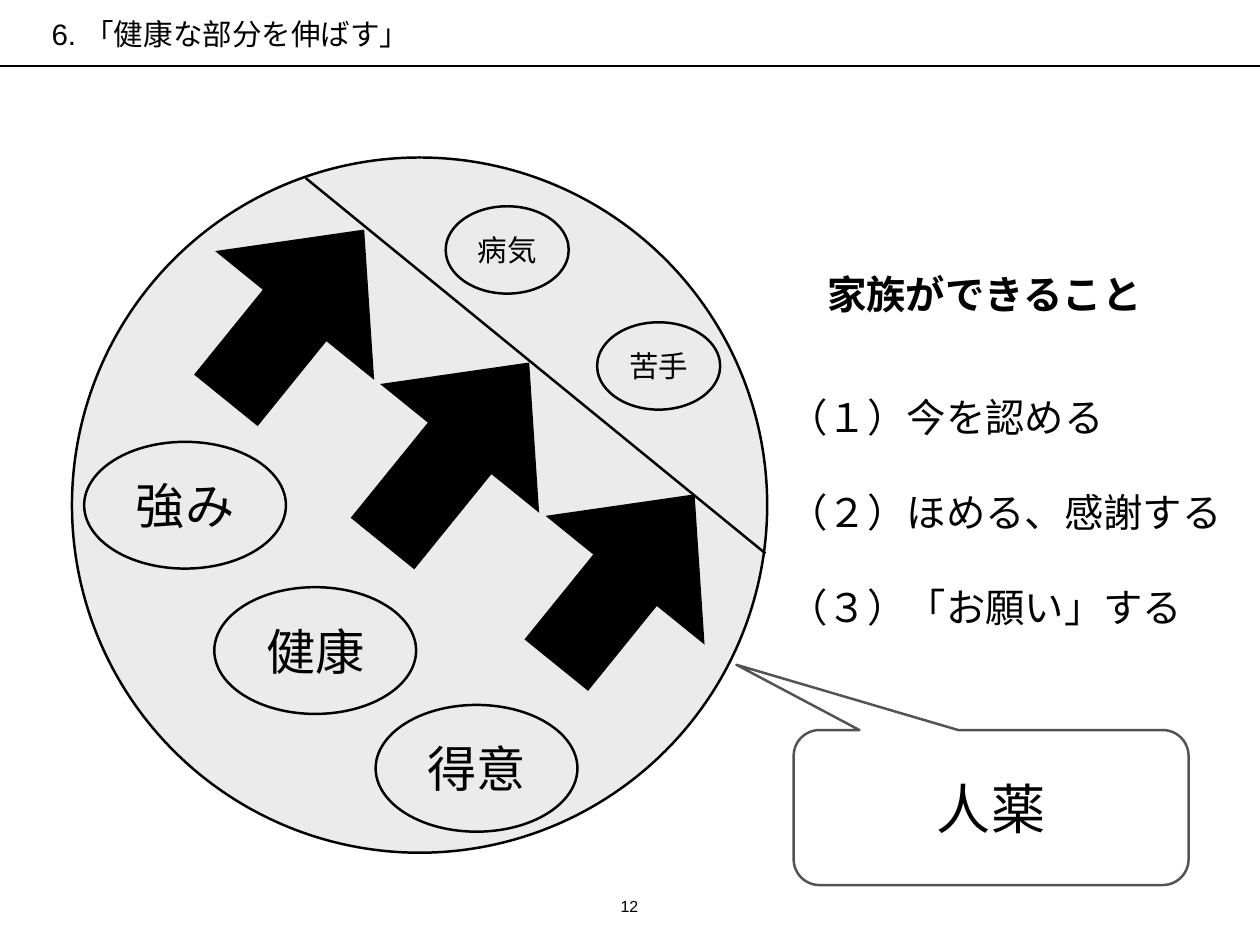
import pptx
import pptx.util
import pptx.dml.color
import pptx.enum.shapes
import pptx.enum.text
import pptx.oxml.ns
import lxml.etree

Pt = pptx.util.Pt
SHAPES = pptx.enum.shapes.MSO_SHAPE
ALIGN = pptx.enum.text.PP_ALIGN
ANCHOR = pptx.enum.text.MSO_ANCHOR
BLACK, WHITE, PALE, GREY = "000000", "FFFFFF", "EBEBEB", "535353"


def colour(hex_text):
    return pptx.dml.color.RGBColor.from_string(hex_text)


def add_child(parent, tag):
    return lxml.etree.SubElement(parent, pptx.oxml.ns.qn(tag))


def place(shape, left, top, width, height):
    shape.left, shape.top = Pt(left), Pt(top)
    shape.width, shape.height = Pt(width), Pt(height)


def set_frame(shape, inset=4.3, wrap=True, anchor=ANCHOR.MIDDLE):
    frame = shape.text_frame
    frame.margin_left = frame.margin_right = Pt(inset)
    frame.margin_top = frame.margin_bottom = Pt(inset)
    frame.auto_size = pptx.enum.text.MSO_AUTO_SIZE.NONE
    frame.word_wrap = wrap
    frame.vertical_anchor = anchor
    return frame


def write(para, text, size, bold=False, align=ALIGN.CENTER):
    para.alignment = align
    span = para.add_run()
    span.text = text
    span.font.name = "Arial"
    span.font.size = Pt(size)
    span.font.bold = bold
    span.font.color.rgb = colour(BLACK)


def add_line(page, x1, y1, x2, y2):
    line = page.shapes.add_connector(
        pptx.enum.shapes.MSO_CONNECTOR.STRAIGHT, Pt(x1), Pt(y1), Pt(x2), Pt(y2))
    line.line.color.rgb = colour(BLACK)
    line.line.width = Pt(2)
    add_child(line._element.spPr, "a:effectLst")


def add_figure(page, kind, box, fill=None, line=None):
    shape = page.shapes.add_shape(kind, *map(Pt, box))
    shape.shadow.inherit = False
    if fill:
        shape.fill.solid()
        shape.fill.fore_color.rgb = colour(fill)
    else:
        shape.fill.background()
    if line:
        shape.line.color.rgb = colour(line)
        shape.line.width = Pt(2)
    else:
        shape.line.fill.background()
    return shape


def draw_header(page, box):
    left, top, width, height = box
    place(page.shapes.title, left, top + 8.5, 374.5, 37.5)
    frame = set_frame(page.shapes.title)
    write(frame.paragraphs[0], "6. 「健康な部分を伸ばす」", 24)
    add_line(page, left, top + height, left + width, top + height)


def draw_person(page, box):
    """Circle of a person: weak sides above the divider, strong sides pushing it up."""
    left, top = box[:2]
    add_figure(page, SHAPES.OVAL, box, PALE, BLACK)
    add_line(page, left + 189.9, top + 16.7, left + 563.6, top + 321.8)
    for x, y, length in ((217.3, 157, 189.4), (360.5, 260, 178.6), (92, 44.8, 178.6)):
        arrow = add_figure(page, SHAPES.RIGHT_ARROW,
                           (left + x, top + y, length, 166.3), BLACK)
        arrow.adjustments[0], arrow.adjustments[1] = 0.4, 0.54
        arrow.rotation = 309
    weak, strong = (100, 71, 24), (164, 103, 40)
    for text, x, y, (width, height, size) in (
            ("病気", 303.7, 39.6, weak), ("苦手", 426.8, 133.9, weak),
            ("強み", 9.9, 231.1, strong), ("健康", 115.7, 349.2, strong),
            ("得意", 246.8, 444.9, strong)):
        oval = add_figure(page, SHAPES.OVAL,
                          (left + x, top + y, width, height), line=BLACK)
        write(set_frame(oval, 0, False).paragraphs[0], text, size)


def draw_family_list(page, box):
    left, top, width, height = box
    heading = page.shapes.add_textbox(Pt(left + 8.5), Pt(top), Pt(310), Pt(47))
    write(set_frame(heading).paragraphs[0], "家族ができること", 32, True)
    body = page.placeholders[1]
    place(body, left, top + 98.6, width, height - 98.6)
    frame = set_frame(body)
    items = ("（１）今を認める", "（２）ほめる、感謝する", "（３）「お願い」する")
    for index, item in enumerate(items):
        para = frame.add_paragraph() if index else frame.paragraphs[0]
        para.line_spacing = Pt(40)
        para.space_before = Pt(37.2 if index else 0)
        para.space_after = Pt(0)
        write(para, item, 32, align=ALIGN.LEFT)
        properties = para._p.get_or_add_pPr()
        properties.set("marL", "0")
        properties.set("indent", "0")
        add_child(properties, "a:buNone")


def draw_callout(page, box):
    callout = add_figure(page, SHAPES.ROUNDED_RECTANGULAR_CALLOUT, box, WHITE, GREY)
    for index, value in enumerate((-0.645, -0.921, 0.167)):
        callout.adjustments[index] = round(value, 3)
    write(set_frame(callout, 0).paragraphs[0], "人薬", 44)


def draw_page_number(page, box):
    number = page.shapes.add_textbox(*map(Pt, box))
    frame = set_frame(number, wrap=False, anchor=ANCHOR.BOTTOM)
    write(frame.paragraphs[0], "12", 13)


def main():
    deck = pptx.Presentation()
    deck.slide_width, deck.slide_height = Pt(1024), Pt(768)
    page = deck.slides.add_slide(deck.slide_layouts[1])
    draw_header(page, (0, 0, 1024, 53.5))
    draw_person(page, (58.5, 128, 565, 565))
    draw_family_list(page, (636.5, 215.3, 369.4, 301))
    draw_page_number(page, (503.3, 725.8, 16.6, 22.3))
    draw_callout(page, (645, 593.3, 321, 126))
    deck.save("out.pptx")


if __name__ == "__main__":
    main()
